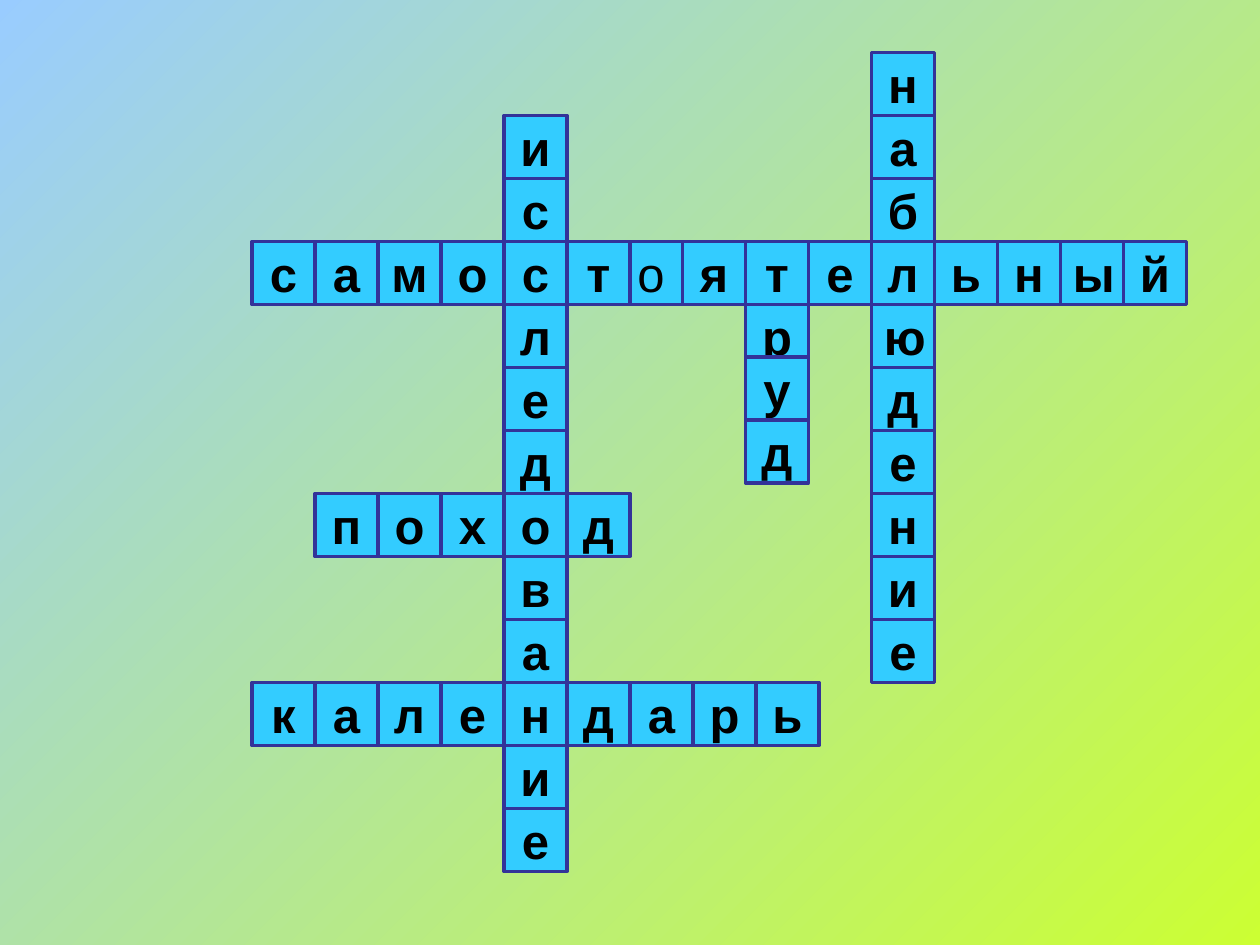
from pptx import Presentation
from pptx.dml.color import RGBColor
from pptx.enum.shapes import MSO_SHAPE
from pptx.enum.text import MSO_ANCHOR, PP_ALIGN
from pptx.util import Pt

SKY = RGBColor(0x99, 0xCC, 0xFF)
LIME = RGBColor(0xCC, 0xFF, 0x33)
CYAN = RGBColor(0x33, 0xCC, 0xFF)
NAVY = RGBColor(0x33, 0x33, 0x99)
BLACK = RGBColor(0, 0, 0)

SIDE = 36  # side of a cell, in points
ROW = 138  # top of the long word across

# Words as (letters, left, top)
ACROSS = [
    ("самост", 144, ROW),
    ("ятельный", 390, ROW),
    ("поход", 180, 282),
    ("календарь", 144, 390),
]
DOWN = [
    ("исследование", 288, 66),
    ("наблюдение", 498, 30),
    ("тр", 426, ROW),
    ("уд", 426, 204),
]


def paint(slide):
    """Fill the background with a diagonal gradient."""
    fill = slide.background.fill
    fill.gradient()
    fill.gradient_angle = 315
    for stop, color, place in zip(fill.gradient_stops, (SKY, LIME), (0, 1)):
        stop.color.rgb = color
        stop.position = place


def add_cell(slide, letter, left, top, bold=True):
    """Draw one square with its letter."""
    cell = slide.shapes.add_shape(
        MSO_SHAPE.RECTANGLE, Pt(left), Pt(top), Pt(SIDE), Pt(SIDE))
    cell.shadow.inherit = False
    cell.fill.solid()
    cell.fill.fore_color.rgb = CYAN
    cell.line.color.rgb = NAVY
    cell.line.width = Pt(2)

    frame = cell.text_frame
    frame.text = letter
    frame.vertical_anchor = MSO_ANCHOR.MIDDLE
    para = frame.paragraphs[0]
    para.alignment = PP_ALIGN.CENTER
    font = para.runs[0].font
    font.name = "Arial"
    font.size = Pt(28)
    font.bold = bold
    font.color.rgb = BLACK


def add_word(slide, word, left, top, step, used):
    """Lay a word out along step, sharing the cells where words cross."""
    for i, letter in enumerate(word):
        spot = (left + i * step[0], top + i * step[1])
        if spot not in used:
            used.add(spot)
            add_cell(slide, letter, *spot)


def main():
    prs = Presentation()
    prs.slide_width, prs.slide_height = Pt(720), Pt(540)
    slide = prs.slides.add_slide(prs.slide_layouts[6])
    paint(slide)

    # The plain letter lies under its neighbours
    add_cell(slide, "о", 354, ROW, bold=False)

    # Crossword
    used = set()
    for words, step in ((ACROSS, (SIDE, 0)), (DOWN, (0, SIDE))):
        for word, left, top in words:
            add_word(slide, word, left, top, step, used)

    prs.save("out.pptx")


if __name__ == "__main__":
    main()
